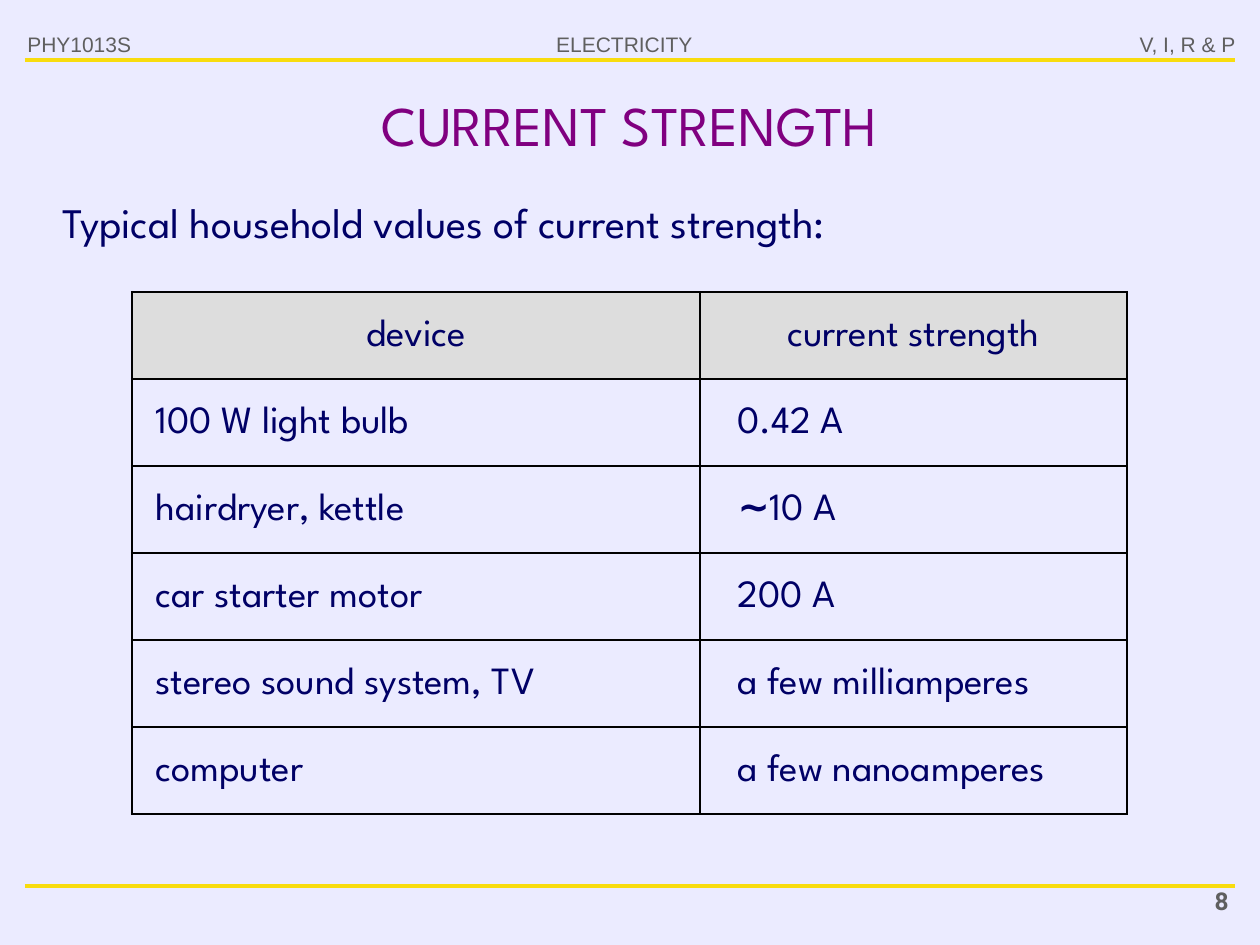
"""Build the current strength slide with its table of household values."""
import pptx
import pptx.dml.color
import pptx.enum.shapes
import pptx.enum.text
import pptx.oxml
import pptx.oxml.ns
import pptx.util

RGBColor = pptx.dml.color.RGBColor
LAVENDER = RGBColor(0xEB, 0xEB, 0xFF)
YELLOW = RGBColor(0xF8, 0xDC, 0x0E)
GREY = RGBColor(0x5F, 0x5F, 0x5F)
PURPLE = RGBColor(0x80, 0x00, 0x80)
NAVY = RGBColor(0x00, 0x00, 0x66)
SILVER = RGBColor(0xDD, 0xDD, 0xDD)
BLACK = RGBColor(0x00, 0x00, 0x00)

PX_PER_INCH = 126
ALIGN = pptx.enum.text.PP_ALIGN
MIDDLE = pptx.enum.text.MSO_ANCHOR.MIDDLE

HEADER = {"name": "Arial", "size": pptx.util.Pt(12)}
PAGE_NUMBER = {"name": "Roboto", "size": pptx.util.Pt(14), "bold": True}
TITLE = {"name": "League Spartan", "size": pptx.util.Pt(32)}
LEAD = {"name": "League Spartan", "size": pptx.util.Pt(24)}
ENTRY = {"name": "League Spartan", "size": pptx.util.Pt(22)}

MARGINALIA = [
    ("PHY1013S", (15, 25, 149, 40), ALIGN.LEFT, HEADER),
    ("ELECTRICITY", (537, 25, 175, 38), ALIGN.CENTER, HEADER),
    ("V, I, R & P", (1113, 25, 135, 38), ALIGN.RIGHT, HEADER),
    ("8", (1111, 880, 130, 47), ALIGN.RIGHT, PAGE_NUMBER),
]
HEADINGS = ["device", "current strength"]
DEVICES = [
    ("100 W light bulb", "0.42 A"),
    ("hairdryer, kettle", "∼10 A"),
    ("car starter motor", "200 A"),
    ("stereo sound system, TV", "a few milliamperes"),
    ("computer", "a few nanoamperes"),
]
COLUMN_WIDTHS = [568, 427]
COLUMN_INDENTS = [11, 25]
ROW_HEIGHT = 87


def px(length):
    """Turn pixels into EMU."""
    return pptx.util.Emu(round(length * 914400 / PX_PER_INCH))


def apply(target, values):
    """Set each named attribute of the target."""
    for name, value in values.items():
        setattr(target, name, value)


def write(paragraph, text, font, color, **layout):
    """Write one run of text with its font, colour and paragraph layout."""
    apply(paragraph, layout)
    run = paragraph.add_run()
    run.text = text
    apply(run.font, font)
    run.font.color.rgb = color


def place(shape, box):
    """Move and size a shape."""
    apply(shape, dict(zip(("left", "top", "width", "height"), map(px, box))))


def indent(paragraph, length):
    """Indent a whole paragraph without a bullet."""
    properties = paragraph._p.get_or_add_pPr()
    properties.set("marL", str(px(length)))
    properties.set("indent", "0")
    properties.append(pptx.oxml.parse_xml(
        f'<a:buNone {pptx.oxml.ns.nsdecls("a")}/>'))


def add_rule(slide, y):
    """Draw a yellow line across the slide."""
    rule = slide.shapes.add_connector(
        pptx.enum.shapes.MSO_CONNECTOR.STRAIGHT, px(25), px(y), px(1235), px(y))
    rule.line.color.rgb = YELLOW
    rule.line.width = pptx.util.Pt(1.75)
    rule._element.spPr.append(pptx.oxml.parse_xml(
        f'<a:effectLst {pptx.oxml.ns.nsdecls("a")}/>'))


def add_label(slide, text, box, alignment, font):
    """Add a small grey text in the margin."""
    label = slide.shapes.add_textbox(*map(px, box))
    label.text_frame.word_wrap = True
    write(label.text_frame.paragraphs[0], text, font, GREY, alignment=alignment)


def fill_placeholder(shape, box, anchor):
    """Place a placeholder and return its first paragraph."""
    place(shape, box)
    apply(shape.text_frame, {
        "word_wrap": True, "vertical_anchor": anchor,
        "auto_size": pptx.enum.text.MSO_AUTO_SIZE.NONE})
    return shape.text_frame.paragraphs[0]


def add_borders(cell, widths):
    """Draw black cell borders from a dict of side and width in points."""
    for side, width in widths.items():
        cell._tc.get_or_add_tcPr().append(pptx.oxml.parse_xml(
            f'<a:ln{side} {pptx.oxml.ns.nsdecls("a")} w="{pptx.util.Pt(width)}">'
            f'<a:solidFill><a:srgbClr val="{BLACK}"/></a:solidFill></a:ln{side}>'))


def add_table(slide):
    """Add the table of devices and their currents."""
    rows = [HEADINGS, *DEVICES]
    last_row, last_column = len(rows) - 1, len(HEADINGS) - 1
    table = slide.shapes.add_table(
        len(rows), len(HEADINGS), px(132), px(292),
        px(sum(COLUMN_WIDTHS)), px(ROW_HEIGHT * len(rows))).table
    apply(table, {"first_row": False, "horz_banding": False})
    for column, width in zip(table.columns, COLUMN_WIDTHS):
        column.width = px(width)
    for r, entries in enumerate(rows):
        table.rows[r].height = px(ROW_HEIGHT)
        for c, entry in enumerate(entries):
            cell = table.cell(r, c)
            cell.vertical_anchor = MIDDLE
            outer = {"L": c == 0, "R": c == last_column,
                     "T": r == 0, "B": r == last_row}
            add_borders(cell, {side: 1.5 if edge else 1
                               for side, edge in outer.items()})
            paragraph = cell.text_frame.paragraphs[0]
            paragraph.line_spacing = 1.1
            if r == 0:
                cell.fill.solid()
                cell.fill.fore_color.rgb = SILVER
                paragraph.alignment = ALIGN.CENTER
            else:
                cell.fill.background()
                indent(paragraph, COLUMN_INDENTS[c])
            if entry.startswith("∼"):
                write(paragraph, "∼", {**ENTRY, "bold": True}, NAVY)
            write(paragraph, entry.lstrip("∼"), ENTRY, NAVY)


def main():
    """Build and save the slide."""
    deck = pptx.Presentation()
    apply(deck, {"slide_width": px(1260), "slide_height": px(945)})
    slide = deck.slides.add_slide(deck.slide_layouts[1])
    slide.background.fill.solid()
    slide.background.fill.fore_color.rgb = LAVENDER
    for y in (60, 886):
        add_rule(slide, y)
    for marginal in MARGINALIA:
        add_label(slide, *marginal)
    title = fill_placeholder(slide.shapes.title, (63, 79, 1134, 91), MIDDLE)
    write(title, "CURRENT STRENGTH", TITLE, PURPLE, alignment=ALIGN.CENTER)
    lead = fill_placeholder(slide.placeholders[1], (25, 185, 1210, 68),
                            pptx.enum.text.MSO_ANCHOR.TOP)
    indent(lead, 25)
    write(lead, "Typical household values of current strength:", LEAD, NAVY,
          line_spacing=1.1, space_before=pptx.util.Pt(0))
    add_table(slide)
    deck.save("out.pptx")


if __name__ == "__main__":
    main()
